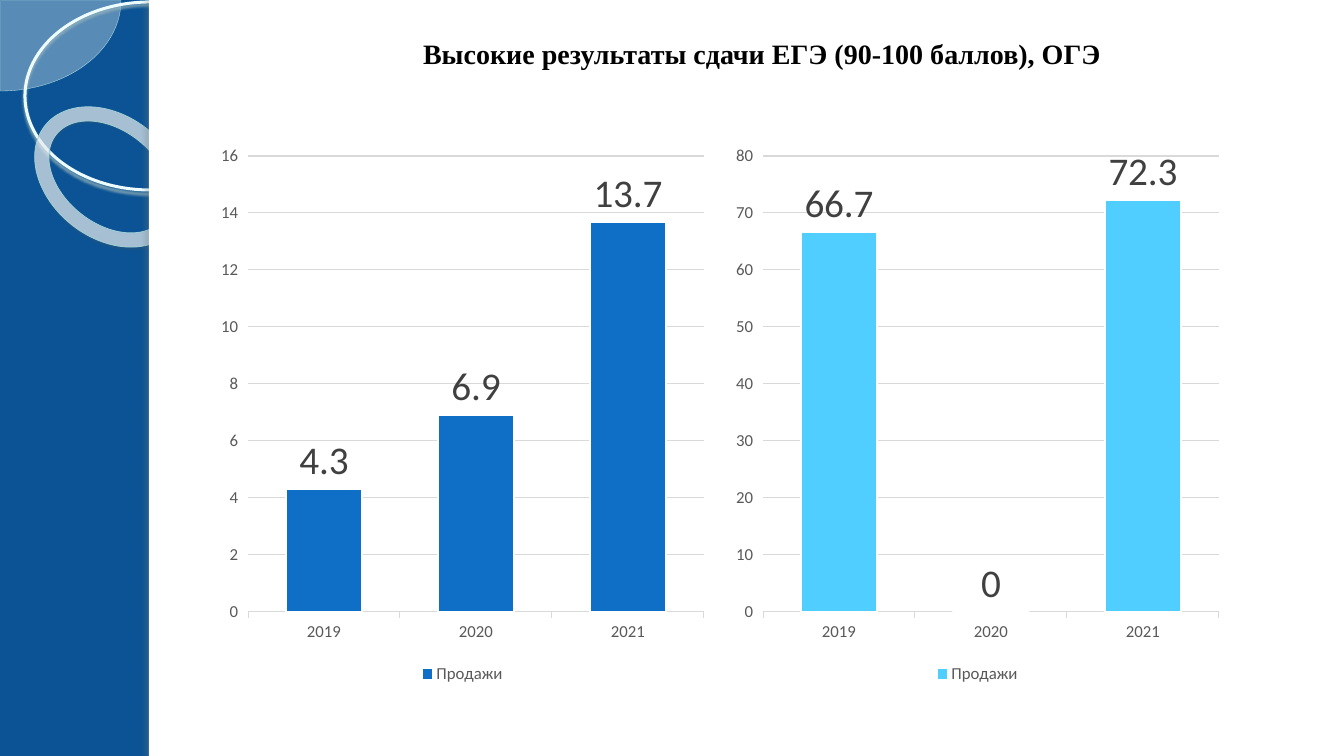
from lxml import etree
from pptx import Presentation
from pptx.chart.data import CategoryChartData
from pptx.dml.color import RGBColor
from pptx.enum.chart import XL_CHART_TYPE, XL_LABEL_POSITION, XL_LEGEND_POSITION, XL_TICK_MARK
from pptx.enum.shapes import MSO_SHAPE
from pptx.enum.text import MSO_ANCHOR, PP_ALIGN
from pptx.oxml.ns import qn
from pptx.util import Emu, Pt

COLUMNS = XL_CHART_TYPE.COLUMN_CLUSTERED
LABEL_ABOVE = XL_LABEL_POSITION.OUTSIDE_END
LEGEND_BELOW = XL_LEGEND_POSITION.BOTTOM
TICK_OUT, TICK_NONE = XL_TICK_MARK.OUTSIDE, XL_TICK_MARK.NONE
PIE, OVAL, DONUT, RECT = MSO_SHAPE.PIE, MSO_SHAPE.OVAL, MSO_SHAPE.DONUT, MSO_SHAPE.RECTANGLE
MIDDLE, CENTER = MSO_ANCHOR.MIDDLE, PP_ALIGN.CENTER

WIDTH, HEIGHT = 1344, 756
SCALE = 12192000 / WIDTH
COLORS = {
    "band": "0B5394", "white": "FFFFFF", "black": "000000",
    "wedge": "F8FEFF", "wedge_line": "AFDBE2",
    "ring": "EDFCFF", "ring_shadow": "9CB9BE",
    "donut": "F9FEFF", "donut_line": "A1CFD6", "donut_shadow": "4B5E61",
    "edge_shadow": "6C7A7C",
    "axis_text": "595959", "label": "404040", "grid": "D9D9D9",
    "ege": "0F6FC6", "oge": "4FCEFF",
}
YEARS = ["2019", "2020", "2021"]


def px(length):
    """Turn pixels into EMU."""
    return Emu(round(length * SCALE))


def color(name):
    """Look up a colour by name."""
    return RGBColor.from_string(COLORS[name])


def set_all(target, values):
    """Set every attribute in values on target."""
    for name, value in values.items():
        setattr(target, name, value)


def set_font(font, name, size, tint, bold=False):
    """Set typeface, size, colour and weight."""
    set_all(font, {"name": name, "size": Pt(size), "bold": bold})
    font.color.rgb = color(tint)


def set_line(line, tint, width):
    """Set colour and width of a line."""
    line.color.rgb = color(tint)
    line.width = Pt(width)


def add_alpha(parent, percent):
    """Make the colour inside parent translucent."""
    tint = next(parent.iter(qn("a:srgbClr")))
    etree.SubElement(tint, qn("a:alpha"), val=str(percent * 1000))


def add_shadow(shape, tint, alpha, blur, distance, angle):
    """Give the shape an outer shadow."""
    effects = shape._element.spPr.find(qn("a:effectLst"))
    shadow = etree.SubElement(
        effects, qn("a:outerShdw"), blurRad=str(Pt(blur)), dist=str(Pt(distance)),
        dir=str(angle * 60000), algn="tl", rotWithShape="0")
    etree.SubElement(shadow, qn("a:srgbClr"), val=COLORS[tint])
    add_alpha(shadow, alpha)


def add_figure(page, kind, box, fill=None, alpha=100, line=None, shadow=None):
    """Add a preset shape with optional fill, outline and shadow."""
    shape = page.shapes.add_shape(kind, *map(px, box))
    shape.shadow.inherit = False
    if fill:
        shape.fill.solid()
        shape.fill.fore_color.rgb = color(fill)
        if alpha < 100:
            add_alpha(shape._element.spPr.find(qn("a:solidFill")), alpha)
    else:
        shape.fill.background()
    if line:
        set_line(shape.line, *line)
    else:
        shape.line.fill.background()
    if shadow:
        add_shadow(shape, *shadow)
    return shape


def add_side_band(page, box):
    """Draw the rings on the blue band and the white panel beside it."""
    left, top, width, height = box
    wedge = add_figure(page, PIE, (left - 120, top - 90, 241, 181),
                       "wedge", 33, ("wedge_line", 0.25))
    wedge.adjustments[0], wedge.adjustments[1] = 0, 54
    add_figure(page, OVAL, (left + 25, top + 2, 250, 188),
               line=("ring", 2.15), shadow=("ring_shadow", 85, 2, 2, 90))
    donut = add_figure(page, DONUT, (left + 27, top + 116, 165, 122), "donut", 63,
                       ("donut_line", 0.58), ("donut_shadow", 35, 1, 1.2, 75))
    donut.adjustments[0] = 0.118
    donut.rotation = 38.6
    panel_left = left + width
    add_figure(page, RECT, (panel_left, top, WIDTH - panel_left, height), "white")
    add_figure(page, RECT, (panel_left, top, 11, height), "white",
               shadow=("edge_shadow", 25, 3, 3, 180))


def add_title(page, box, text):
    """Write the centred heading in the upper part of its box."""
    frame = page.shapes.add_textbox(*map(px, box)).text_frame
    set_all(frame, {"word_wrap": True, "vertical_anchor": MIDDLE,
                    "margin_top": 0, "margin_bottom": px(31)})
    para = frame.paragraphs[0]
    para.alignment = CENTER
    span = para.add_run()
    span.text = text
    set_font(span.font, "Times New Roman", 20, "black", True)


def add_column_chart(page, box, values, tint, top_value, step):
    """Add a column chart of one series by year."""
    data = CategoryChartData()
    data.categories = YEARS
    data.add_series("Продажи", values)
    chart = page.shapes.add_chart(COLUMNS, *map(px, box), data).chart
    set_all(chart, {"has_title": False, "has_legend": True})
    set_font(chart.font, "Calibri", 12, "axis_text")
    set_all(chart.legend, {"position": LEGEND_BELOW, "include_in_layout": False})

    for axis in (chart.category_axis, chart.value_axis):
        set_all(axis, {"major_tick_mark": TICK_OUT, "minor_tick_mark": TICK_NONE})
    set_line(chart.category_axis.format.line, "grid", 0.75)
    scale = chart.value_axis
    set_all(scale, {"minimum_scale": 0, "maximum_scale": top_value, "major_unit": step,
                    "has_major_gridlines": True})
    scale.format.line.fill.background()
    set_line(scale.major_gridlines.format.line, "grid", 0.75)

    plot = chart.plots[0]
    set_all(plot, {"gap_width": 100, "vary_by_categories": False, "has_data_labels": True})
    set_all(plot.data_labels, {"show_value": True, "position": LABEL_ABOVE})
    set_font(plot.data_labels.font, "Calibri", 28, "label")
    columns = plot.series[0].format
    columns.fill.solid()
    columns.fill.fore_color.rgb = color(tint)
    set_line(columns.line, "white", 1.5)


def add_results(page, box):
    """Place the two charts side by side."""
    left, top, width, height = box
    gap = 12
    chart_width = (width - gap) // 2
    charts = [((4.3, 6.9, 13.7), "ege", 16, 2), ((66.7, 0, 72.3), "oge", 80, 10)]
    for index, chart in enumerate(charts):
        chart_left = left + index * (chart_width + gap)
        add_column_chart(page, (chart_left, top, chart_width, height), *chart)


def main():
    """Build and save the deck."""
    deck = Presentation()
    set_all(deck, {"slide_width": px(WIDTH), "slide_height": px(HEIGHT)})
    page = deck.slides.add_slide(deck.slide_layouts[6])
    page.background.fill.solid()
    page.background.fill.fore_color.rgb = color("band")
    add_side_band(page, (0, 0, 149, HEIGHT))
    add_title(page, (211, 30, 1102, 78), "Высокие результаты сдачи ЕГЭ (90-100 баллов), ОГЭ")
    add_results(page, (211, 135, 1018, 553))
    deck.save("out.pptx")


if __name__ == "__main__":
    main()
